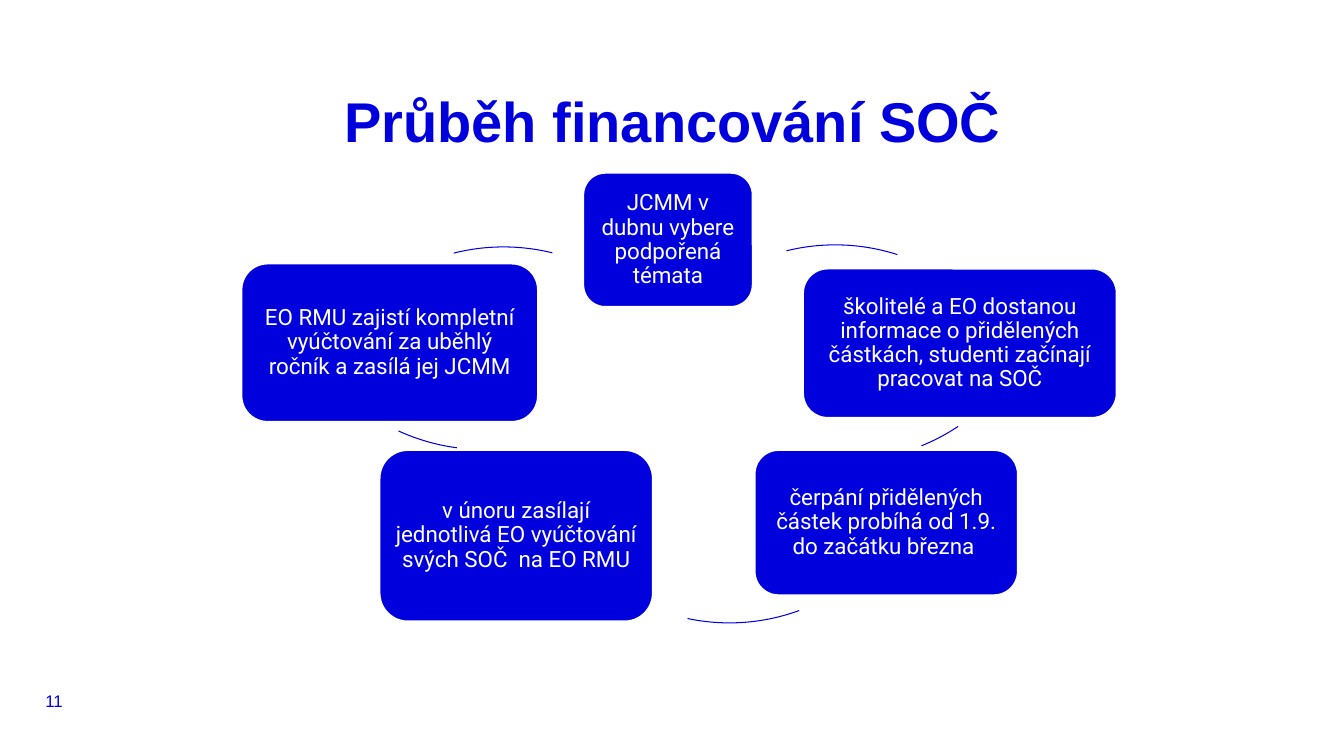
from pptx import Presentation
from pptx.dml.color import RGBColor
from pptx.enum import shapes, text
from pptx.util import Inches, Pt

BLUE, WHITE = "0000DC", "FFFFFF"
ARC_SIZE = 4.03

# left, top, width, height, wording
STEPS = [
    (5.78, 1.71, 1.69, 1.34, "JCMM v dubnu vybere podpořená témata"),
    (7.96, 2.66, 3.12, 1.49, "školitelé a EO dostanou informace o přidělených "
     "částkách, studenti začínají pracovat na SOČ"),
    (7.48, 4.46, 2.62, 1.45, "čerpání přidělených částek probíhá od 1.9. "
     "do začátku března "),
    (3.76, 4.46, 2.72, 1.71, "v únoru zasílají jednotlivá EO vyúčtování "
     "svých SOČ  na EO RMU"),
    (2.39, 2.61, 2.95, 1.58, "EO RMU zajistí kompletní vyúčtování za uběhlý "
     "ročník a zasílá jej JCMM"),
]
# left, top, start and end angle in degrees clockwise from the right
ARCS = [
    (6.27, 2.43, 256.1, 287.8),
    (6.37, 0.54, 56.3, 68),
    (5.22, 2.15, 69.9, 101.9),
    (2.78, 0.43, 97.5, 114.7),
    (2.98, 2.45, 255.8, 283.9),
]


def rgb(value):
    return RGBColor.from_string(value)


def write(sp, wording, font, size, color, align, anchor, inset=0, bold=False):
    tf = sp.text_frame
    tf.word_wrap = True
    tf.auto_size = text.MSO_AUTO_SIZE.NONE
    tf.vertical_anchor = anchor
    tf.margin_left = tf.margin_right = Inches(inset)
    tf.margin_top = tf.margin_bottom = Inches(inset)
    tf.text = wording
    p = tf.paragraphs[0]
    p.alignment = align
    r = p.runs[0]
    r.font.name, r.font.size, r.font.bold = font, Pt(size), bold
    r.font.color.rgb = rgb(color)
    return p


prs = Presentation()
prs.slide_width, prs.slide_height = Inches(13.33), Inches(7.5)
s = prs.slides.add_slide(prs.slide_layouts[5])

number = s.shapes.add_textbox(Inches(0.45), Inches(6.81), Inches(0.28), Inches(0.28))
write(number, "11", "Arial", 12, BLUE, text.PP_ALIGN.LEFT, text.MSO_ANCHOR.MIDDLE)

title = s.shapes.title
title.left, title.top = Inches(0.79), Inches(0.79)
title.width, title.height = Inches(11.76), Inches(0.49)
p = write(title, "Průběh financování SOČ", "Arial", 40, BLUE,
          text.PP_ALIGN.CENTER, text.MSO_ANCHOR.TOP, bold=True)
p.line_spacing = 1.1

for (left, top, width, height, wording), (arc_left, arc_top, start, end) in zip(STEPS, ARCS):
    sp = s.shapes.add_shape(shapes.MSO_SHAPE.ROUNDED_RECTANGLE, Inches(left),
                            Inches(top), Inches(width), Inches(height))
    sp.shadow.inherit = False
    sp.fill.solid()
    sp.fill.fore_color.rgb = rgb(BLUE)
    sp.line.color.rgb = rgb(WHITE)
    sp.line.width = Pt(2)
    p = write(sp, wording, "Roboto", 16, WHITE, text.PP_ALIGN.CENTER,
              text.MSO_ANCHOR.MIDDLE, inset=0.07)
    p.line_spacing = 0.9

    arc = s.shapes.add_shape(shapes.MSO_SHAPE.ARC, Inches(arc_left), Inches(arc_top),
                             Inches(ARC_SIZE), Inches(ARC_SIZE))
    arc.shadow.inherit = False
    arc.fill.background()
    arc.line.color.rgb = rgb(BLUE)
    arc.line.width = Pt(0.75)
    # An adjustment of 0.6 is one degree
    arc.adjustments[0], arc.adjustments[1] = start * 0.6, end * 0.6

prs.save("out.pptx")
